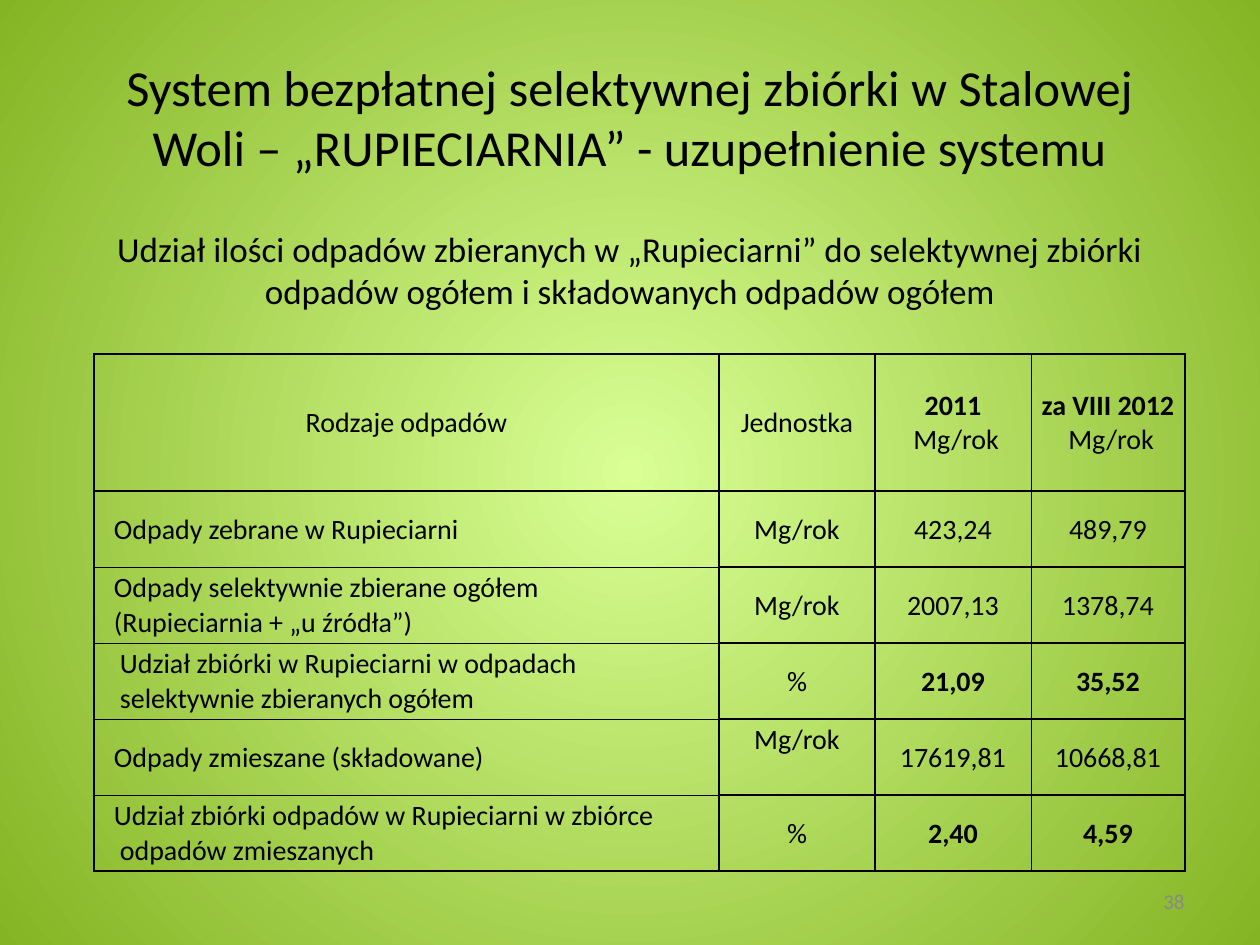
from lxml.etree import SubElement
from pptx import Presentation
from pptx.dml.color import RGBColor
from pptx.enum.text import MSO_ANCHOR, MSO_AUTO_SIZE, PP_ALIGN
from pptx.oxml.ns import qn
from pptx.util import Pt

BLACK = RGBColor(0x00, 0x00, 0x00)
GRAY = RGBColor(0x89, 0x89, 0x89)
LIGHT = RGBColor(0xD9, 0xFF, 0x95)
GREEN = RGBColor(0x84, 0xB4, 0x23)
FONT = "Calibri"

COLS = [625, 156, 156, 154]
ROWS = [137] + [76] * 5
HEADS = ["Rodzaje odpadów", "Jednostka", "2011\n Mg/rok", "za VIII 2012\n Mg/rok"]
# label, left margin, first-line indent, unit, 2011, 2012
DATA = [
    ("Odpady zebrane w Rupieciarni", 19, 0, "Mg/rok", "423,24", "489,79"),
    ("Odpady selektywnie zbierane ogółem\n(Rupieciarnia + „u źródła”)",
     19, 0, "Mg/rok", "2007,13", "1378,74"),
    ("Udział zbiórki w Rupieciarni w odpadach\nselektywnie zbieranych ogółem",
     25, 0, "%", "21,09", "35,52"),
    ("Odpady zmieszane (składowane)", 19, 0, "Mg/rok", "17619,81", "10668,81"),
    ("Udział zbiórki odpadów w Rupieciarni w zbiórce odpadów zmieszanych",
     25, -6, "%", "2,40", "4,59"),
]


def px(n):
    return round(n * 914400 / 126)


def write(frame, text, size=16, color=BLACK, bold=(), align=PP_ALIGN.CENTER,
          left=0, indent=0, before=0):
    """Fill a text frame, one paragraph a line; bold holds the bold line numbers."""
    frame.word_wrap = True
    frame.text = text
    for i, para in enumerate(frame.paragraphs):
        para.alignment = align
        para.space_before = Pt(before)
        props = para._p.get_or_add_pPr()
        props.set("marL", str(px(left)))
        props.set("indent", str(px(indent)))
        font = para.runs[0].font
        font.name, font.size, font.bold = FONT, Pt(size), i in bold
        font.color.rgb = color


def paint(slide):
    """Radial gradient background."""
    fill = slide.background.fill
    fill.gradient()
    for stop, color in zip(fill.gradient_stops, (LIGHT, GREEN)):
        stop.color.rgb = color
    grad = next(slide._element.iter(qn("a:gradFill")))
    grad.remove(grad.find(qn("a:lin")))
    way = SubElement(grad, qn("a:path"), {"path": "circle"})
    SubElement(way, qn("a:fillToRect"), dict.fromkeys("ltrb", "50000"))


def head(slide, x, y, w, h):
    title = slide.shapes.title
    title.left, title.top, title.width, title.height = map(px, (x, y, w, h))
    frame = title.text_frame
    frame.auto_size = MSO_AUTO_SIZE.NONE
    frame.vertical_anchor = MSO_ANCHOR.MIDDLE
    write(frame, "System bezpłatnej selektywnej zbiórki w Stalowej Woli – "
          "„RUPIECIARNIA” - uzupełnienie systemu", size=28.8)


def label(slide, x, y, w, h, text, **form):
    box = slide.shapes.add_textbox(*map(px, (x, y, w, h)))
    write(box.text_frame, text, **form)


def border(cell, **widths):
    props = cell._tc.get_or_add_tcPr()
    for side in "LRTB":
        line = SubElement(props, qn("a:ln" + side), w=str(Pt(widths.get(side, 1))))
        fill = SubElement(line, qn("a:solidFill"))
        SubElement(fill, qn("a:srgbClr"), val=str(BLACK))


def style(cell, row, col):
    thin = {}
    if col == 0 and row:
        thin["T"] = 0.5 if row > 1 else 1
        thin["B"] = 0.5 if row < len(DATA) else 1
    elif col == 2:
        thin["R"] = 0.5
    elif col == 3:
        thin["L"] = 0.5
    border(cell, **thin)
    cell.fill.background()
    cell.margin_left = cell.margin_right = cell.margin_top = px(1)
    cell.margin_bottom = 0
    cell.vertical_anchor = MSO_ANCHOR.MIDDLE


def grid(slide, x, y):
    shape = slide.shapes.add_table(len(ROWS), len(COLS), px(x), px(y),
                                   px(sum(COLS)), px(sum(ROWS)))
    table = shape.table
    table.first_row = table.horz_banding = False
    for col, w in zip(table.columns, COLS):
        col.width = px(w)
    for row, h in zip(table.rows, ROWS):
        row.height = px(h)
    for r in range(len(ROWS)):
        for c in range(len(COLS)):
            style(table.cell(r, c), r, c)

    for c, text in enumerate(HEADS):
        write(table.cell(0, c).text_frame, text, bold=(0,) if c > 1 else ())
    for r, (name, left, indent, unit, *nums) in enumerate(DATA, 1):
        write(table.cell(r, 0).text_frame, name, align=PP_ALIGN.LEFT,
              left=left, indent=indent)
        write(table.cell(r, 1).text_frame, unit)
        for c, num in enumerate(nums, 2):
            write(table.cell(r, c).text_frame, num, bold=(0,) if unit == "%" else ())

    mixed = table.cell(4, 1)
    mixed.vertical_anchor = MSO_ANCHOR.TOP
    mixed.margin_top = px(4)


def main():
    deck = Presentation()
    deck.slide_width, deck.slide_height = px(1260), px(945)
    slide = deck.slides.add_slide(deck.slide_layouts[5])
    paint(slide)
    head(slide, 63, 38, 1134, 157)
    label(slide, 63, 221, 1134, 624,
          "Udział ilości odpadów zbieranych w „Rupieciarni” do selektywnej zbiórki "
          "odpadów ogółem i składowanych odpadów ogółem", size=20, before=4)
    grid(slide, 94, 354)
    label(slide, 903, 882, 294, 40, "38", size=12, color=GRAY, align=PP_ALIGN.RIGHT)
    deck.save("out.pptx")


if __name__ == "__main__":
    main()
